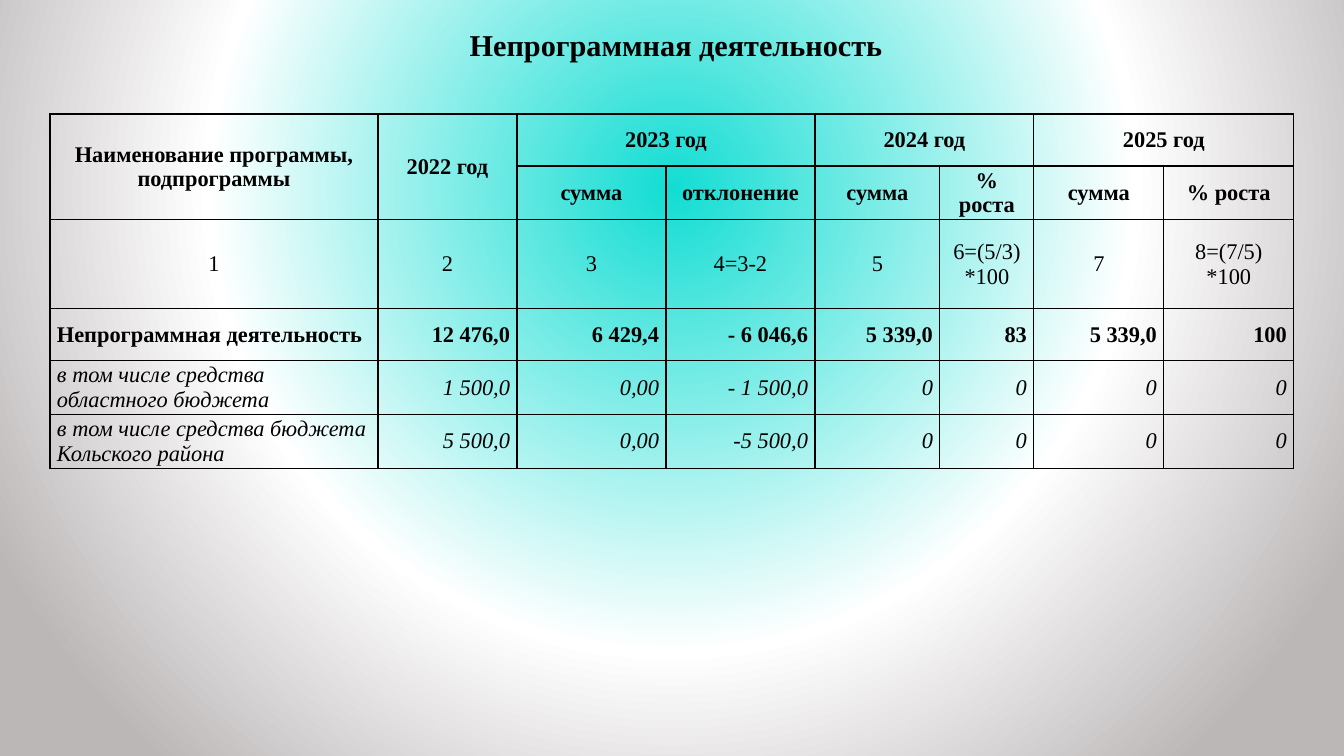
from pptx import Presentation, util as u
from pptx.dml.color import RGBColor
from pptx.enum import text
from pptx.oxml import parse_xml
from pptx.oxml.ns import nsdecls

EMU_PER_PX = 914400 / 100.8
FONT = "Times New Roman"
COLORS = {"ink": "000000", "centre": "13DDD3", "middle": "FFFFFF", "edge": "BBB7B7"}
LEFT, CENTER, RIGHT = text.PP_ALIGN.LEFT, text.PP_ALIGN.CENTER, text.PP_ALIGN.RIGHT

COLUMNS = [328, 139, 149, 149, 125, 94, 130, 130]
ROWS = [52, 51, 89, 52, 51, 51]
# Each row: bold, italic, alignment of the first cell, alignment of the rest, texts
CONTENT = [
    (True, False, CENTER, CENTER,
     ["Наименование программы, подпрограммы", "2022 год", "2023 год", "",
      "2024 год", "", "2025 год", ""]),
    (True, False, CENTER, CENTER,
     ["", "", "сумма", "отклонение", "сумма", "% роста", "сумма", "% роста"]),
    (False, False, CENTER, CENTER,
     ["1", "2", "3", "4=3-2", "5", "6=(5/3)\n*100", "7", "8=(7/5)\n*100"]),
    (True, False, LEFT, RIGHT,
     ["Непрограммная деятельность", "12 476,0", "6 429,4", "- 6 046,6",
      "5 339,0", "83", "5 339,0", "100"]),
    (False, True, LEFT, RIGHT,
     ["в том числе средства областного бюджета", "1 500,0", "0,00", "- 1 500,0",
      "0", "0", "0", "0"]),
    (False, True, LEFT, RIGHT,
     ["в том числе средства бюджета Кольского района", "5 500,0", "0,00", "-5 500,0",
      "0", "0", "0", "0"]),
]


def px(n):
    return u.Emu(round(n * EMU_PER_PX))


def format_text(tf, size, bold, italic, align):
    for p in tf.paragraphs:
        p.alignment = align
        for r in p.runs:
            r.font.name = FONT
            r.font.size = u.Pt(size)
            r.font.bold = bold
            r.font.italic = italic
            r.font.color.rgb = RGBColor.from_string(COLORS["ink"])


def set_background(s):
    """Fill the slide with a circular gradient centred above the middle."""
    s._element.cSld.insert(0, parse_xml(
        f'<p:bg {nsdecls("p", "a")}><p:bgPr><a:gradFill rotWithShape="1"><a:gsLst>'
        f'<a:gs pos="0"><a:srgbClr val="{COLORS["centre"]}"><a:alpha val="56000"/></a:srgbClr></a:gs>'
        f'<a:gs pos="60000"><a:srgbClr val="{COLORS["middle"]}"/></a:gs>'
        f'<a:gs pos="100000"><a:srgbClr val="{COLORS["edge"]}"/></a:gs></a:gsLst>'
        '<a:path path="circle"><a:fillToRect l="20000" t="10000" r="20000" b="60000"/></a:path>'
        '</a:gradFill><a:effectLst/></p:bgPr></p:bg>'))


def add_title(s, title, x, y, w, h):
    tf = s.shapes.add_textbox(px(x), px(y), px(w), px(h)).text_frame
    tf.word_wrap = True
    tf.margin_left = tf.margin_right = tf.margin_top = tf.margin_bottom = 0
    tf.text = title
    tf.paragraphs[0].line_spacing = 0.9
    format_text(tf, 21.6, True, False, CENTER)


def set_borders(cell):
    tc_pr = cell._tc.get_or_add_tcPr()
    for side in "LRTB":
        tc_pr.append(parse_xml(
            f'<a:ln{side} {nsdecls("a")} w="12700"><a:solidFill>'
            f'<a:srgbClr val="{COLORS["ink"]}"/></a:solidFill></a:ln{side}>'))


def fill_cell(cell, value, bold, italic, align):
    set_borders(cell)
    cell.fill.background()
    cell.vertical_anchor = text.MSO_ANCHOR.MIDDLE
    cell.margin_left = cell.margin_right = px(7)
    cell.margin_top = cell.margin_bottom = 0
    if value:
        cell.text_frame.text = value
        format_text(cell.text_frame, 16, bold, italic, align)


def add_budget_table(s, x, y):
    table = s.shapes.add_table(len(ROWS), len(COLUMNS), px(x), px(y),
                               px(sum(COLUMNS)), px(sum(ROWS))).table
    table.first_row = table.horz_banding = False
    for column, width in zip(table.columns, COLUMNS):
        column.width = px(width)
    for row, height, (bold, italic, first, rest, values) in zip(table.rows, ROWS, CONTENT):
        row.height = px(height)
        for i, (cell, value) in enumerate(zip(row.cells, values)):
            fill_cell(cell, value, bold, italic, rest if i else first)
    for col in (0, 1):
        table.cell(0, col).merge(table.cell(1, col))
    for col in (2, 4, 6):
        table.cell(0, col).merge(table.cell(0, col + 1))


def main():
    prs = Presentation()
    prs.slide_width, prs.slide_height = px(1344), px(756)
    s = prs.slides.add_slide(prs.slide_layouts[6])
    set_background(s)
    add_title(s, "Непрограммная деятельность", 200, 30, 952, 62)
    add_budget_table(s, 50, 114)
    prs.save("out.pptx")


if __name__ == "__main__":
    main()
